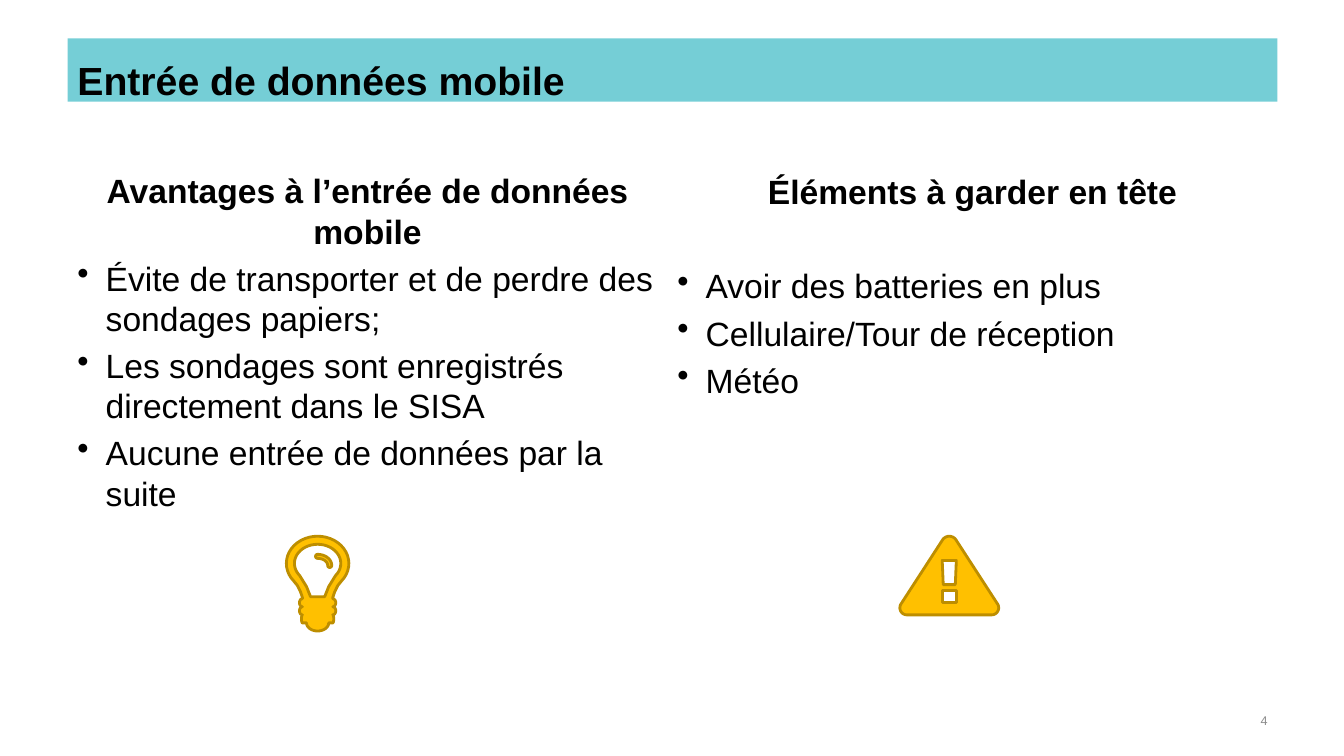
import math
from lxml import etree
from pptx import Presentation, util as u
from pptx.dml.color import RGBColor
from pptx.enum import shapes, text

prs = Presentation()
prs.slide_width, prs.slide_height = u.Inches(13.33), u.Inches(7.5)
s = prs.slides.add_slide(prs.slide_layouts[6])


def rgb(value):
    return RGBColor.from_string(value)


def arc(cx, cy, rx, ry, start, end, steps=16):
    angles = [math.radians(start + (end - start) * i / steps) for i in range(steps + 1)]
    return [(cx + rx * math.cos(a), cy + ry * math.sin(a)) for a in angles]


align, anchor = text.PP_ALIGN, text.MSO_ANCHOR
styles = {
    "title": {"size": 28, "bold": True, "color": "000000", "align": align.LEFT},
    "heading": {"size": 24, "bold": True, "color": "000000", "align": align.CENTER},
    "bullet": {"size": 24, "bold": False, "color": "000000", "align": align.LEFT},
    "number": {"size": 9, "bold": False, "color": "8C8C8C", "align": align.RIGHT},
}
bullet_gap, blank_line_gap = 4.8, 38.4
hanging = u.Inches(0.28)

title_bar = s.shapes.add_shape(shapes.MSO_SHAPE.RECTANGLE, u.Inches(0.67), u.Inches(0.38), u.Inches(12), u.Inches(0.63))
title_bar.shadow.inherit = False
title_bar.fill.solid()
title_bar.fill.fore_color.rgb = rgb("75CED6")
title_bar.line.fill.background()

advantages, reminders, page_number = [
    s.shapes.add_textbox(*map(u.Inches, box))
    for box in [(0.67, 1.64, 5.95, 5.22), (6.62, 1.65, 6.05, 4.95), (9.56, 6.95, 3.11, 0.4)]
]

contents = [
    (title_bar, anchor.TOP, "title", ["Entrée de données mobile"], 0),
    (advantages, anchor.TOP, "heading", [
        "Avantages à l’entrée de données mobile",
        "Évite de transporter et de perdre des sondages papiers;",
        "Les sondages sont enregistrés directement dans le SISA",
        "Aucune entrée de données par la suite",
    ], bullet_gap),
    (reminders, anchor.TOP, "heading", [
        "Éléments à garder en tête",
        "Avoir des batteries en plus",
        "Cellulaire/Tour de réception",
        "Météo",
    ], blank_line_gap),
    (page_number, anchor.MIDDLE, "number", ["4"], 0),
]

for sp, position, first_style, lines, first_gap in contents:
    tf = sp.text_frame
    tf.word_wrap = True
    tf.vertical_anchor = position
    for i, line in enumerate(lines):
        p = tf.add_paragraph() if i else tf.paragraphs[0]
        style = styles["bullet" if i else first_style]
        p.alignment = style["align"]
        if i:
            p.space_before = u.Pt(first_gap if i == 1 else bullet_gap)
            pPr = p._p.get_or_add_pPr()
            pPr.set("marL", str(hanging))
            pPr.set("indent", str(-hanging))
            bu = etree.SubElement(pPr, "{http://schemas.openxmlformats.org/drawingml/2006/main}buChar")
            bu.set("char", "•")
        r = p.add_run()
        r.text = line
        for key, value in {"name": "Arial", "size": u.Pt(style["size"]), "bold": style["bold"]}.items():
            setattr(r.font, key, value)
        r.font.color.rgb = rgb(style["color"])
title_bar.text_frame.paragraphs[0].line_spacing = u.Pt(43.2)

head_y = 5.59
bulb_half = arc(0, head_y, 0.31, 0.27, 270, 400) + [(0.2, 5.81), (0.17, 5.87), (0.15, 5.93)]
for ridge, bulge in enumerate((0.03, 0.03, 0.01)):
    bulb_half += arc(0.15, 5.98 + 0.08 * ridge, bulge, 0.04, -90, 90)
bulb_half += arc(0, 6.18, 0.11, 0.08, 0, 90)
glass_half = arc(0, head_y, 0.23, 0.19, 270, 400) + [(0.11, 5.82), (0.07, 5.92)]

glint_y = 5.61
glint = (
    arc(0, glint_y, 0.14, 0.11, 270, 360)
    + arc(0.12, glint_y, 0.02, 0.02, 0, 180)
    + arc(0, glint_y, 0.1, 0.07, 360, 270)
    + arc(0, glint_y - 0.09, 0.02, 0.02, 90, 270)
)

side_angle = 328
triangle_half = arc(0, 5.4, 0.08, 0.08, 270, side_angle) + arc(0.42, 6.03, 0.07, 0.07, side_angle, 450)
mark_half = [(0.07, 5.56), (0.06, 5.8)]
dot_half = [(0.07, 5.86), (0.07, 5.98)]

icons = [
    (3.15, [bulb_half, glass_half], [glint]),
    (9.415, [triangle_half, mark_half, dot_half], []),
]

for axis, halves, details in icons:
    mirrored = [half + [(-x, y) for x, y in reversed(half)] for half in halves]
    outlines = [[(u.Inches(axis + x), u.Inches(y)) for x, y in outline] for outline in mirrored + details]
    fb = s.shapes.build_freeform(*outlines[0][0])
    for i, outline in enumerate(outlines):
        if i:
            fb.move_to(*outline[0])
        fb.add_line_segments(outline[1:], close=True)
    icon = fb.convert_to_shape()
    icon.shadow.inherit = False
    icon.fill.solid()
    icon.fill.fore_color.rgb = rgb("FFC000")
    icon.line.color.rgb = rgb("BD8E00")
    icon.line.width = u.Pt(2)

prs.save("out.pptx")
